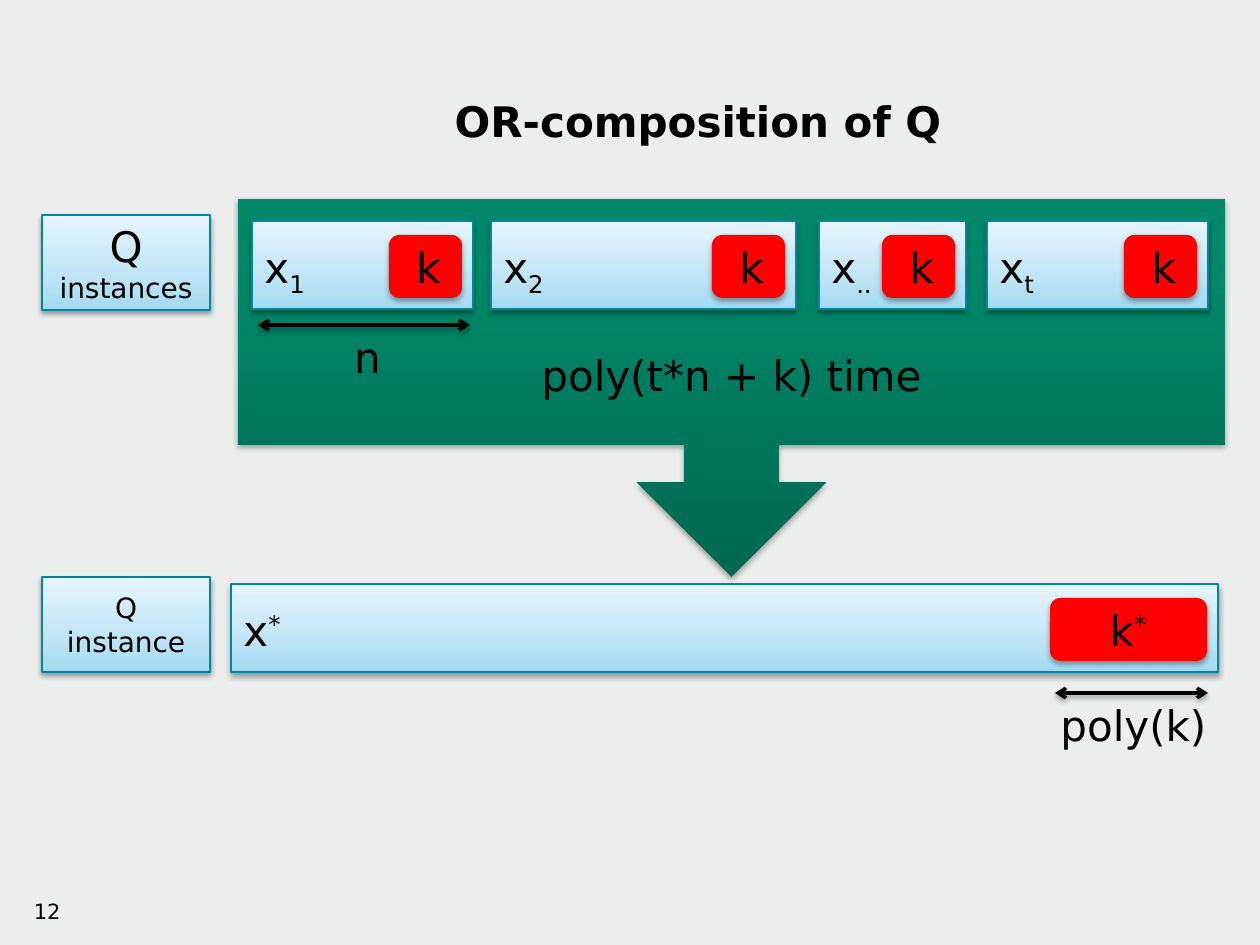
import pptx
import pptx.dml.color
import pptx.enum.shapes
import pptx.enum.text
import pptx.oxml
import pptx.oxml.ns
import pptx.util
from lxml import etree

RGB = pptx.dml.color.RGBColor
SHAPE = pptx.enum.shapes.MSO_SHAPE
ALIGN = pptx.enum.text.PP_ALIGN
ANCHOR = pptx.enum.text.MSO_ANCHOR
qn = pptx.oxml.ns.qn

PX = 914400 / 126
FONT = "DejaVu Sans"
BLACK = RGB(0x00, 0x00, 0x00)
RED = RGB(0xFF, 0x00, 0x00)
PAPER = RGB(0xEC, 0xED, 0xED)
TEAL = RGB(0x00, 0x87, 0x9F)
GREEN_STOPS = [(0, RGB(0x00, 0x68, 0x50)), (80, RGB(0x00, 0x88, 0x68)),
               (100, RGB(0x00, 0x88, 0x68))]
BLUE_STOPS = [(0, RGB(0xA2, 0xDA, 0xF2)), (35, RGB(0xBF, 0xE4, 0xF5)),
              (100, RGB(0xE6, 0xF5, 0xFC))]

prs = pptx.Presentation()
prs.slide_width, prs.slide_height = int(1260 * PX), int(945 * PX)
s = prs.slides.add_slide(prs.slide_layouts[5])
s.background.fill.solid()
s.background.fill.fore_color.rgb = PAPER
shadowed = []


def add_box(kind, x, y, w, h, fill, line=None):
    """Add a preset shape; fill is one colour or a list of gradient stops."""
    sp = s.shapes.add_shape(kind, *(int(v * PX) for v in (x, y, w, h)))
    if isinstance(fill, list):
        sp.fill.gradient()
        sp.fill.gradient_angle = 90
        stops = sp._element.spPr.find(".//" + qn("a:gsLst"))
        stops.clear()
        for pos, color in fill:
            gs = etree.SubElement(stops, qn("a:gs"), pos=str(pos * 1000))
            etree.SubElement(gs, qn("a:srgbClr"), val=str(color))
    else:
        sp.fill.solid()
        sp.fill.fore_color.rgb = fill
    if line:
        sp.line.color.rgb = line
        sp.line.width = pptx.util.Pt(0.75)
    else:
        sp.line.fill.background()
    shadowed.append(sp)
    return sp


def write(target, paragraphs, align=ALIGN.CENTER, anchor=ANCHOR.MIDDLE):
    """Fill a shape, or a new text box given as x, y, w, h.

    Each paragraph is a list of runs: text, size, baseline percent."""
    if isinstance(target, tuple):
        target = s.shapes.add_textbox(*(int(v * PX) for v in target))
    tf = target.text_frame
    tf.word_wrap = True
    tf.vertical_anchor = anchor
    for i, runs in enumerate(paragraphs):
        p = tf.add_paragraph() if i else tf.paragraphs[0]
        p.alignment = align
        for text, size, base in runs:
            r = p.add_run()
            r.text = text
            r.font.name = FONT
            r.font.size = pptx.util.Pt(size)
            r.font.color.rgb = BLACK
            if base:
                r._r.get_or_add_rPr().set("baseline", str(base * 1000))


# Slide number
write((0, 892, 73, 53), [[("12", 12, 0)]], ALIGN.RIGHT, ANCHOR.TOP)

# Composition callout; the top inset keeps its text below the instances
sp = add_box(SHAPE.DOWN_ARROW_CALLOUT, 238, 199, 987, 378, GREEN_STOPS)
sp.text_frame.margin_top = int(112 * PX)
write(sp, [[("poly(t*n + k) time", 24, 0)]])

# Title
title = s.shapes.title
title.left, title.top, title.width, title.height = (
    int(v * PX) for v in (189, 42, 1018, 157))
write(title, [[("OR-composition of Q", 24, 0)]])
title.text_frame.paragraphs[0].runs[0].font.bold = True

# Row labels
for y, paragraphs in [(577, [[("Q", 16, 0)], [("instance", 16, 0)]]),
                      (215, [[("Q ", 24, 0), ("instances", 16, 0)]])]:
    write(add_box(SHAPE.RECTANGLE, 42, y, 168, 95, BLUE_STOPS, TEAL), paragraphs)

# Input instances, each with its parameter k
for x, w, index in [(252, 221, "1"), (491, 305, "2"), (819, 147, ".."), (987, 221, "t")]:
    add_box(SHAPE.RECTANGLE, x, 221, w, 88, BLUE_STOPS, TEAL)
    write((x, 235, w, 63), [[("x", 24, 0), (index, 24, -25)]], ALIGN.LEFT, ANCHOR.TOP)
    add_box(SHAPE.ROUNDED_RECTANGLE, x + w - 84, 235, 73, 63, RED)
    write((x + w - 73, 235, 53, 63), [[("k", 24, 0)]], ALIGN.RIGHT, ANCHOR.TOP)

# Output instance
add_box(SHAPE.RECTANGLE, 231, 584, 987, 88, BLUE_STOPS, TEAL)
write((231, 598, 987, 63), [[("x", 24, 0), ("*", 24, 30)]], ALIGN.LEFT, ANCHOR.TOP)
add_box(SHAPE.ROUNDED_RECTANGLE, 1050, 598, 157, 63, RED)
write((1072, 598, 112, 63), [[("k", 24, 0), ("*", 24, 30)]], anchor=ANCHOR.TOP)

# Size arrows with their labels
for x1, x2, y, text, left, width in [(258, 470, 325, "n", 252, 231),
                                     (1055, 1208, 693, "poly(k)", 1039, 189)]:
    arrow = s.shapes.add_connector(pptx.enum.shapes.MSO_CONNECTOR.STRAIGHT,
                                   *(int(v * PX) for v in (x1, y, x2, y)))
    arrow.line.color.rgb = BLACK
    arrow.line.width = pptx.util.Pt(2)
    ln = arrow.line._get_or_add_ln()
    for end in ("a:headEnd", "a:tailEnd"):
        etree.SubElement(ln, qn(end), type="arrow")
    shadowed.append(arrow)
    write((left, y, width, 63), [[(text, 24, 0)]])

# Soft shadow straight below every shape and arrow
for sp in shadowed:
    effects = etree.SubElement(sp._element.spPr, qn("a:effectLst"))
    shadow = etree.SubElement(effects, qn("a:outerShdw"), blurRad="39370",
                              dist="22860", dir="5400000", rotWithShape="0")
    color = etree.SubElement(shadow, qn("a:srgbClr"), val=str(BLACK))
    etree.SubElement(color, qn("a:alpha"), val="35000")

prs.save("out.pptx")
